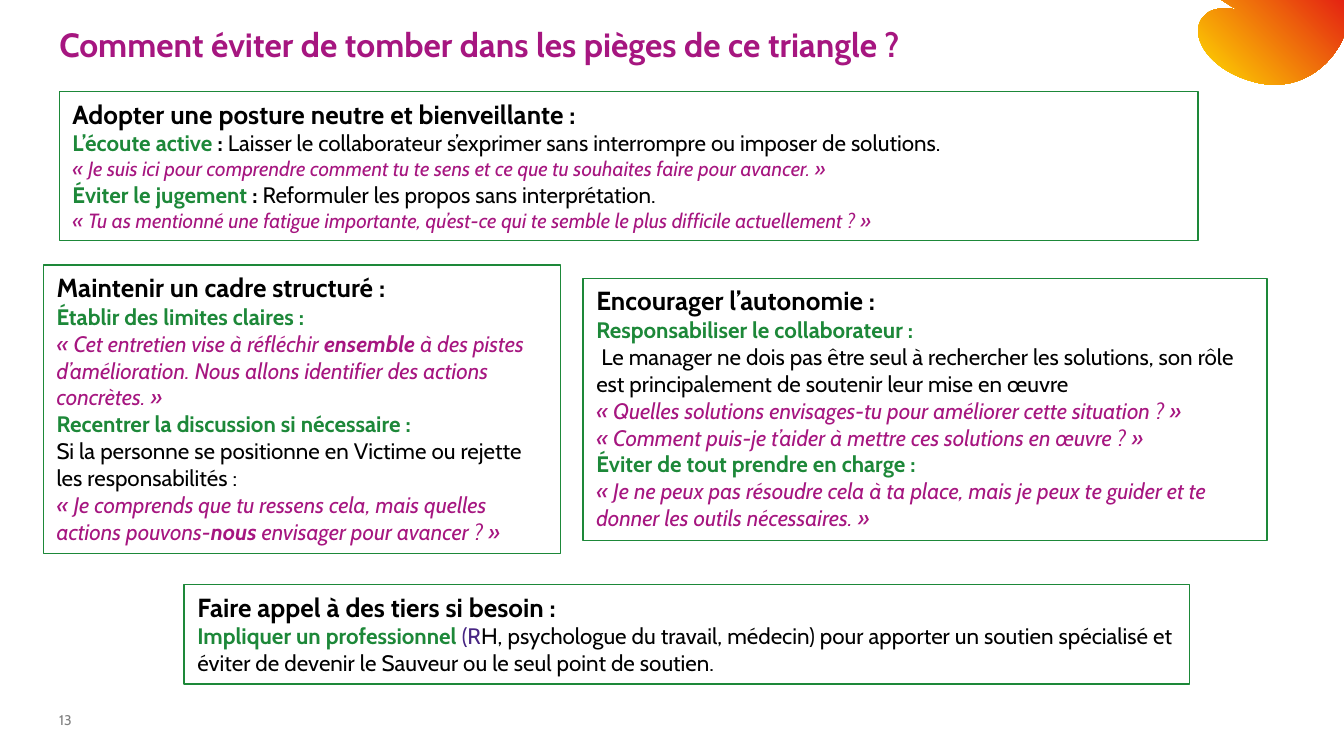
import pptx
import pptx.util
import pptx.dml.color
import pptx.enum.shapes
import pptx.enum.text
from dataclasses import dataclass
from pptx.util import Cm


@dataclass(frozen=True)
class Theme:
    font: str = "Cabin"
    black: str = "000000"
    green: str = "1D8839"
    magenta: str = "A61680"
    violet: str = "472583"
    grey: str = "808080"
    yellow: str = "FFDD00"
    red: str = "E42312"
    title: float = 18
    heading: float = 14
    body: float = 12
    quote: float = 11
    number: float = 7.5


T = Theme()

# Run styles: size, colour, bold, italic
STYLES = {
    "title": (T.title, T.magenta, True, False),
    "head": (T.heading, T.black, True, False),
    "key": (T.body, T.green, True, False),
    "colon": (T.body, T.black, True, False),
    "body": (T.body, T.black, False, False),
    "accent": (T.body, T.violet, False, False),
    "quote": (T.body, T.magenta, False, True),
    "strong": (T.body, T.magenta, True, True),
    "small": (T.quote, T.magenta, False, True),
    "number": (T.number, T.grey, False, False),
}

# Each box: position (left, top, width, height in cm), then paragraphs of (style, text) runs
BOXES = [
    ((3.48, 11.05, 19, 1.88), [
        [("head", "Faire appel à des tiers si besoin :")],
        [("key", "Impliquer un professionnel "), ("accent", "(R"),
         ("body", "H, psychologue du travail, médecin) pour apporter un soutien "
                  "spécialisé et éviter de devenir le Sauveur ou le seul point de soutien.")],
    ]),
    ((1.12, 1.73, 21.52, 2.82), [
        [("head", "Adopter une posture neutre et bienveillante :")],
        [("key", "L’écoute active "), ("colon", ": "),
         ("body", "Laisser le collaborateur s’exprimer sans interrompre ou imposer de solutions.")],
        [("small", "« Je suis ici pour comprendre comment tu te sens et ce que tu "
                   "souhaites faire pour avancer. »")],
        [("key", "Éviter le jugement "), ("colon", ": "),
         ("body", "Reformuler les propos sans interprétation.")],
        [("small", "« Tu as mentionné une fatigue importante, qu’est-ce qui te semble "
                   "le plus difficile actuellement ? »")],
    ]),
    ((0.82, 5.01, 9.78, 5.46), [
        [("head", "Maintenir un cadre structuré :")],
        [("key", "Établir des limites claires :")],
        [("quote", "« Cet entretien vise à réfléchir "), ("strong", "ensemble"),
         ("quote", " à des pistes d’amélioration. Nous allons identifier des actions concrètes. »")],
        [("key", "Recentrer la discussion si nécessaire :")],
        [("body", "Si la personne se positionne en Victime ou rejette les responsabilités :")],
        [("quote", "« Je comprends que tu ressens cela, mais quelles actions pouvons-"),
         ("strong", "nous"), ("quote", " envisager pour avancer ? »")],
    ]),
    ((11.02, 5.26, 12.93, 4.96), [
        [("head", "Encourager l’autonomie :")],
        [("key", "Responsabiliser le collaborateur :")],
        [("body", " Le manager ne dois pas être seul à rechercher les solutions, son rôle "
                  "est principalement de soutenir leur mise en œuvre")],
        [("quote", "« Quelles solutions envisages-tu pour améliorer cette situation ? »")],
        [("quote", "« Comment puis-je t’aider à mettre ces solutions en œuvre ? »")],
        [("key", "Éviter de tout prendre en charge :")],
        [("quote", "« Je ne peux pas résoudre cela à ta place, mais je peux te guider et "
                   "te donner les outils nécessaires. »")],
    ]),
]

# Corner blob in cm: straight start, then cubic curves (two controls and an end)
BLOB_LINE = [(23.09, 0), (25.4, 0), (25.4, 0.66), (25.37, 0.76)]
BLOB_CURVES = [
    [(25.07, 1.37), (24.43, 1.75), (23.7, 1.55)],
    [(22.76, 1.3), (22.43, 0.58), (22.78, 0.28)],
    [(22.91, 0.15), (23.14, 0.13), (23.47, 0.2)],
    [(23.39, 0.18), (23.32, 0.15), (23.24, 0.1)],
]


def rgb(value):
    return pptx.dml.color.RGBColor.from_string(value)


def format_run(r, style):
    size, colour, bold, italic = STYLES[style]
    r.font.name = T.font
    r.font.size = pptx.util.Pt(size)
    r.font.color.rgb = rgb(colour)
    r.font.bold = bold
    r.font.italic = italic


def set_margins(tf, left=0, top=0, right=0, bottom=0):
    tf.margin_left, tf.margin_top = Cm(left), Cm(top)
    tf.margin_right, tf.margin_bottom = Cm(right), Cm(bottom)


def curve_points(start, controls, steps=20):
    a, b, c, d = start, *controls
    for i in range(1, steps + 1):
        t = i / steps
        u = 1 - t
        yield tuple(u**3 * a[k] + 3 * u * u * t * b[k] + 3 * u * t * t * c[k] + t**3 * d[k]
                    for k in (0, 1))


def add_blob(s):
    points = list(BLOB_LINE)
    for controls in BLOB_CURVES:
        points.extend(curve_points(points[-1], controls))
    builder = s.shapes.build_freeform(Cm(points[0][0]), Cm(points[0][1]))
    builder.add_line_segments([(Cm(x), Cm(y)) for x, y in points[1:]], close=True)
    sp = builder.convert_to_shape()
    sp.shadow.inherit = False
    sp.line.fill.background()
    sp.fill.gradient()
    sp.fill.gradient_angle = 45
    for stop, colour, position in zip(sp.fill.gradient_stops, (T.yellow, T.red), (0, 1)):
        stop.color.rgb = rgb(colour)
        stop.position = position


def set_title(s, text):
    sp = s.shapes.title
    sp.left, sp.top, sp.width, sp.height = Cm(1.12), Cm(-0.03), Cm(23.16), Cm(2.46)
    tf = sp.text_frame
    tf.text = text
    tf.word_wrap = True
    tf.auto_size = pptx.enum.text.MSO_AUTO_SIZE.NONE
    tf.vertical_anchor = pptx.enum.text.MSO_ANCHOR.MIDDLE
    set_margins(tf, bottom=0.61)
    p = tf.paragraphs[0]
    p.alignment = pptx.enum.text.PP_ALIGN.LEFT
    p.line_spacing = 0.8
    format_run(p.runs[0], "title")


def add_number(s, text):
    sp = s.shapes.add_textbox(Cm(1.12), Cm(13.51), Cm(1.5), Cm(0.25))
    tf = sp.text_frame
    tf.text = text
    tf.word_wrap = True
    tf.vertical_anchor = pptx.enum.text.MSO_ANCHOR.BOTTOM
    set_margins(tf)
    format_run(tf.paragraphs[0].runs[0], "number")


def add_box(s, place, paragraphs):
    sp = s.shapes.add_shape(pptx.enum.shapes.MSO_SHAPE.RECTANGLE, *map(Cm, place))
    sp.shadow.inherit = False
    sp.fill.background()
    sp.line.color.rgb = rgb(T.green)
    sp.line.width = pptx.util.Pt(0.75)
    tf = sp.text_frame
    tf.word_wrap = True
    tf.auto_size = pptx.enum.text.MSO_AUTO_SIZE.SHAPE_TO_FIT_TEXT
    tf.vertical_anchor = pptx.enum.text.MSO_ANCHOR.TOP
    for i, runs in enumerate(paragraphs):
        p = tf.add_paragraph() if i else tf.paragraphs[0]
        p.alignment = pptx.enum.text.PP_ALIGN.LEFT
        for style, text in runs:
            r = p.add_run()
            r.text = text
            format_run(r, style)


def main():
    prs = pptx.Presentation()
    prs.slide_width, prs.slide_height = Cm(25.4), Cm(14.29)
    s = prs.slides.add_slide(prs.slide_layouts[5])
    # Decoration, title and page number
    add_blob(s)
    set_title(s, "Comment éviter de tomber dans les pièges de ce triangle ?")
    add_number(s, "13")
    # Advice boxes
    for place, paragraphs in BOXES:
        add_box(s, place, paragraphs)
    prs.save("out.pptx")


if __name__ == "__main__":
    main()
